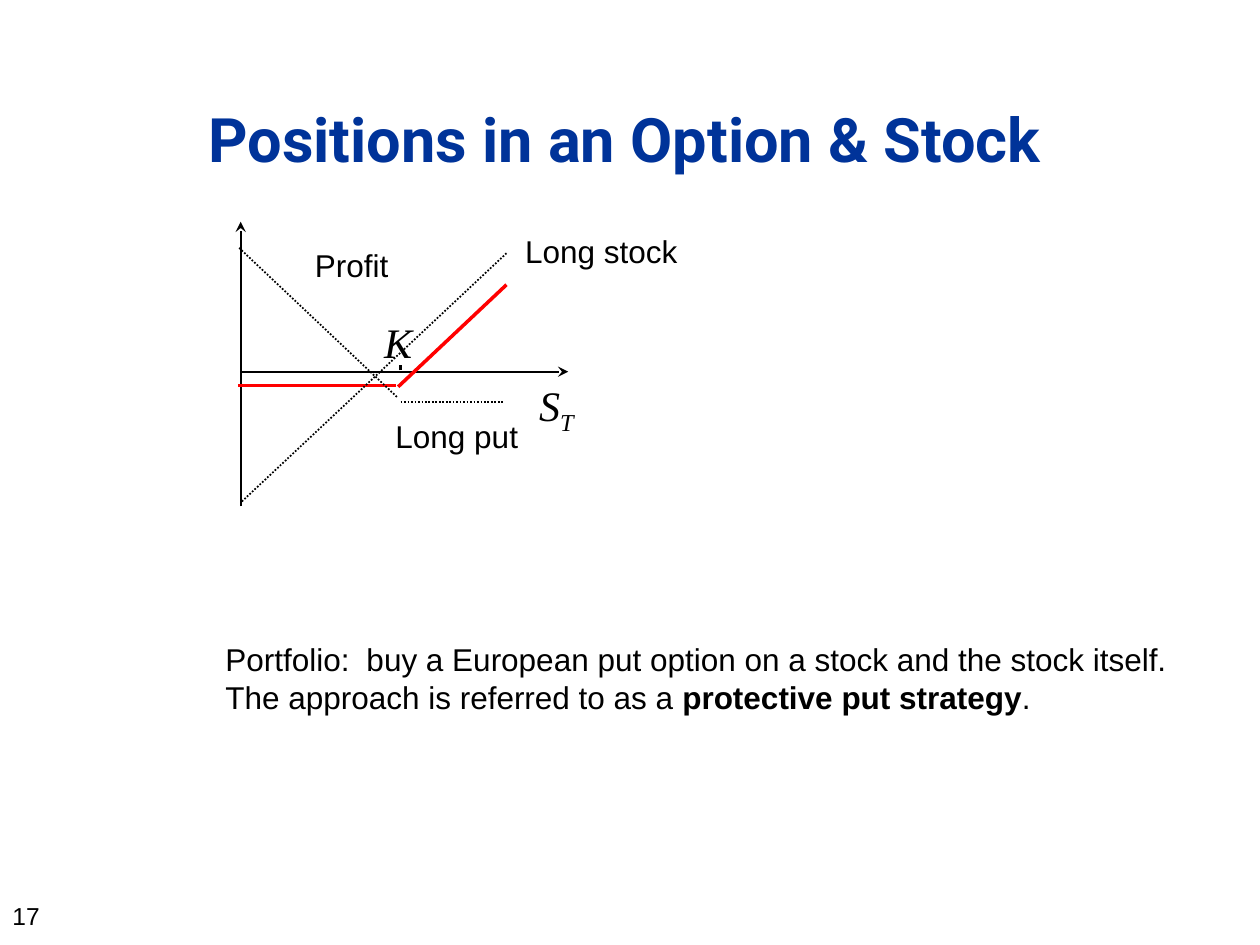
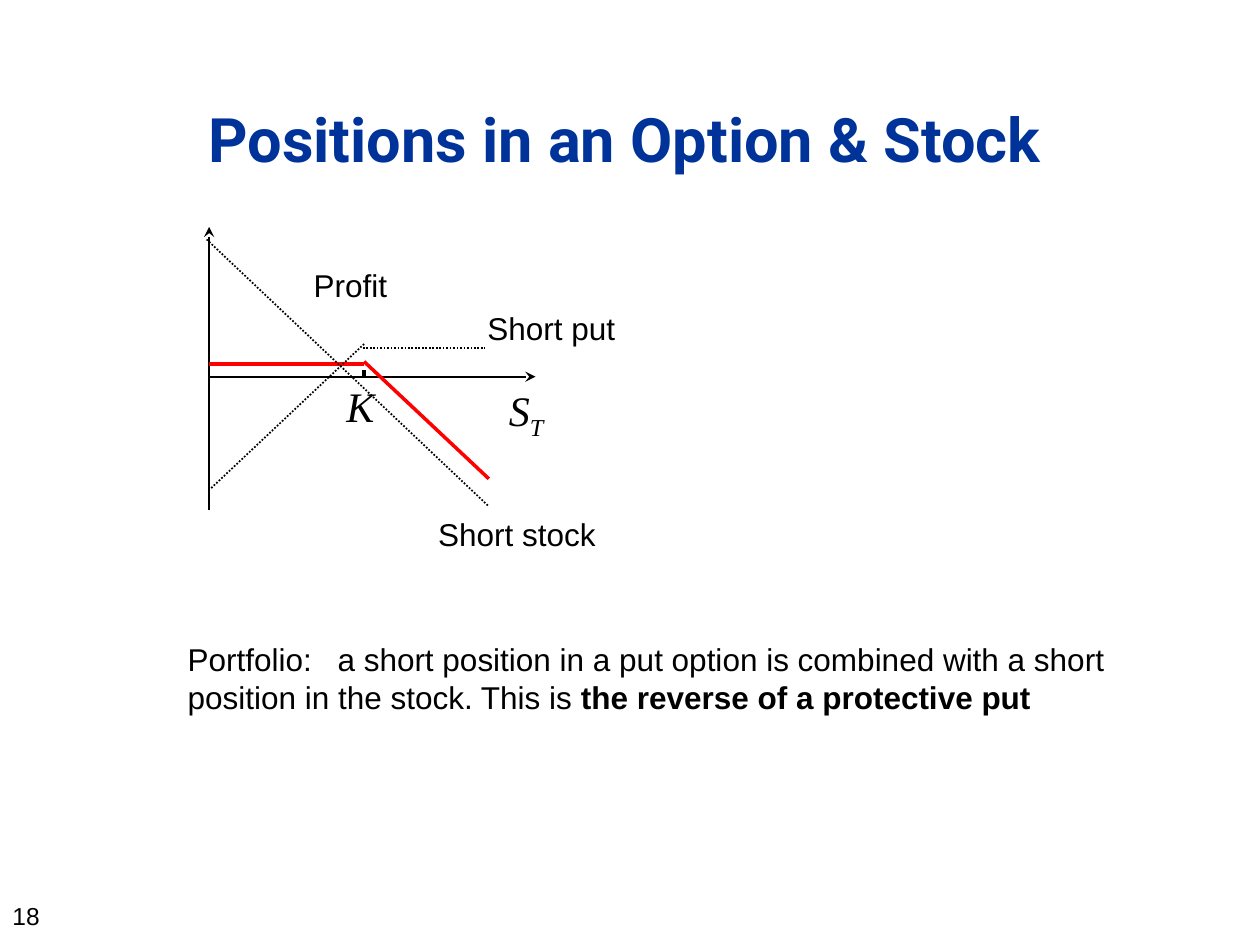
from pptx import Presentation
from pptx.dml.color import RGBColor
from pptx.enum.dml import MSO_LINE
from pptx.enum.shapes import MSO_CONNECTOR
from pptx.enum.text import MSO_ANCHOR, MSO_AUTO_SIZE, PP_ALIGN
from pptx.oxml.ns import qn
from pptx.util import Inches, Pt
from lxml.etree import SubElement

COLORS = {"title": "003399", "text": "000000", "axis": "000000", "payoff": "FF0000"}
TITLE = "Positions in an Option & Stock"


def rgb(name):
    return RGBColor.from_string(COLORS[name])


def set_font(font, name, size, color="text", bold=None, italic=None):
    font.name, font.size = name, Pt(size)
    font.color.rgb = rgb(color)
    font.bold, font.italic = bold, italic


def add_title(s):
    title = s.shapes.title
    title.left, title.top = Inches(0.71), Inches(0.29)
    title.width, title.height = Inches(8.5), Inches(1.58)
    tf = title.text_frame
    tf.text = TITLE
    tf.word_wrap, tf.auto_size = True, MSO_AUTO_SIZE.NONE
    tf.vertical_anchor = MSO_ANCHOR.MIDDLE
    p = tf.paragraphs[0]
    p.alignment, p.line_spacing = PP_ALIGN.CENTER, 1.05
    set_font(p.font, "Roboto", 35, "title", bold=True)


def add_box(s, x, y, w, h):
    tf = s.shapes.add_textbox(Inches(x), Inches(y), Inches(w), Inches(h)).text_frame
    tf.word_wrap = True
    return tf.paragraphs[0]


def add_label(s, text, x, y, w, size=18):
    p = add_box(s, x, y, w, 0.4)
    p.add_run().text = text
    set_font(p.font, "Arial", size)


def add_symbol(s, letter, x, y, w, subscript=None):
    p = add_box(s, x, y, w, 0.5)
    p.add_run().text = letter
    if subscript:
        r = p.add_run()
        r.text = subscript
        r.font._element.set("baseline", "-25000")
    set_font(p.font, "Times New Roman", 24, italic=True)


def add_line(s, start, end, color="axis", width=1, dotted=False, arrow=False):
    line = s.shapes.add_connector(
        MSO_CONNECTOR.STRAIGHT, *(Inches(v) for v in (*start, *end)))
    line.line.color.rgb = rgb(color)
    line.line.width = Pt(width)
    if dotted:
        line.line.dash_style = MSO_LINE.ROUND_DOT
    if arrow:
        SubElement(line.line._get_or_add_ln(), qn("a:tailEnd"), type="stealth")
    SubElement(line._element.spPr, qn("a:effectLst"))


def add_diagram(s, axis_x, top, bottom, zero_y, right, tick, payoff, positions):
    # Axes and strike tick
    add_line(s, (axis_x, bottom), (axis_x, top), arrow=True)
    add_line(s, (axis_x, zero_y), (right, zero_y), arrow=True)
    add_line(s, *tick, width=2)
    # Combined profit and its component positions
    for start, end in payoff:
        add_line(s, start, end, "payoff", 2)
    for start, end in positions:
        add_line(s, start, end, dotted=True)


def add_portfolio(s, x, tab, text, bold_text, ending=""):
    p = add_box(s, x, 5.03, 7.89, 0.71)
    tabs = SubElement(p._p.get_or_add_pPr(), qn("a:tabLst"))
    SubElement(tabs, qn("a:tab"), pos=str(Inches(tab)), algn="l")
    p.add_run().text = "Portfolio:\t" + text
    r = p.add_run()
    r.text, r.font.bold = bold_text, True
    if ending:
        p.add_run().text = ending
    set_font(p.font, "Arial", 18)


def add_base_slide(prs, number):
    s = prs.slides.add_slide(prs.slide_layouts[5])
    add_title(s)
    add_label(s, str(number), 0, 7.1, 2.25, size=14)
    return s


def build_protective_put(prs):
    s = add_base_slide(prs, 17)
    add_diagram(
        s, 1.91, 1.76, 4.02, 2.95, 4.51,
        tick=((3.18, 2.94), (3.18, 2.9)),
        payoff=[((1.89, 3.06), (3.14, 3.06)), ((3.16, 3.07), (4.02, 2.26))],
        positions=[((3.15, 3.15), (1.89, 1.96)), ((3.18, 3.19), (3.99, 3.19)),
                   ((1.92, 3.98), (4.02, 2.01))])
    add_symbol(s, "S", 4.18, 2.96, 0.56, subscript="T")
    add_symbol(s, "K", 2.95, 2.46, 0.42)
    add_label(s, "Profit", 2.4, 1.9, 0.92)
    add_label(s, "Long stock", 4.07, 1.79, 1.97)
    add_label(s, "Long put", 3.04, 3.26, 1.97)
    add_portfolio(
        s, 1.69, 1.12,
        "buy a European put option on a stock and the stock itself. "
        "The approach is referred to as a ", "protective put strategy", ".")


def build_reverse_put(prs):
    s = add_base_slide(prs, 18)
    add_diagram(
        s, 1.66, 1.8, 4.05, 2.99, 4.25,
        tick=((2.89, 2.99), (2.89, 2.94)),
        payoff=[((1.66, 2.89), (2.89, 2.89)), ((3.88, 3.8), (2.89, 2.87))],
        positions=[((1.64, 1.9), (3.88, 4.02)), ((2.88, 2.76), (3.85, 2.76)),
                   ((2.89, 2.73), (1.67, 3.88))])
    add_symbol(s, "S", 3.94, 3, 0.56, subscript="T")
    add_symbol(s, "K", 2.65, 2.97, 0.42)
    add_label(s, "Profit", 2.39, 2.06, 1.12)
    add_label(s, "Short put", 3.77, 2.4, 1.29)
    add_label(s, "Short stock", 3.38, 4.04, 1.5)
    add_portfolio(
        s, 1.39, 1.19,
        "a short position in a put option is combined with a short position "
        "in the stock. This is ", "the reverse of a protective put")


def main():
    prs = Presentation()
    prs.slide_width, prs.slide_height = Inches(10), Inches(7.5)
    build_protective_put(prs)
    build_reverse_put(prs)
    prs.save("out.pptx")


if __name__ == "__main__":
    main()
